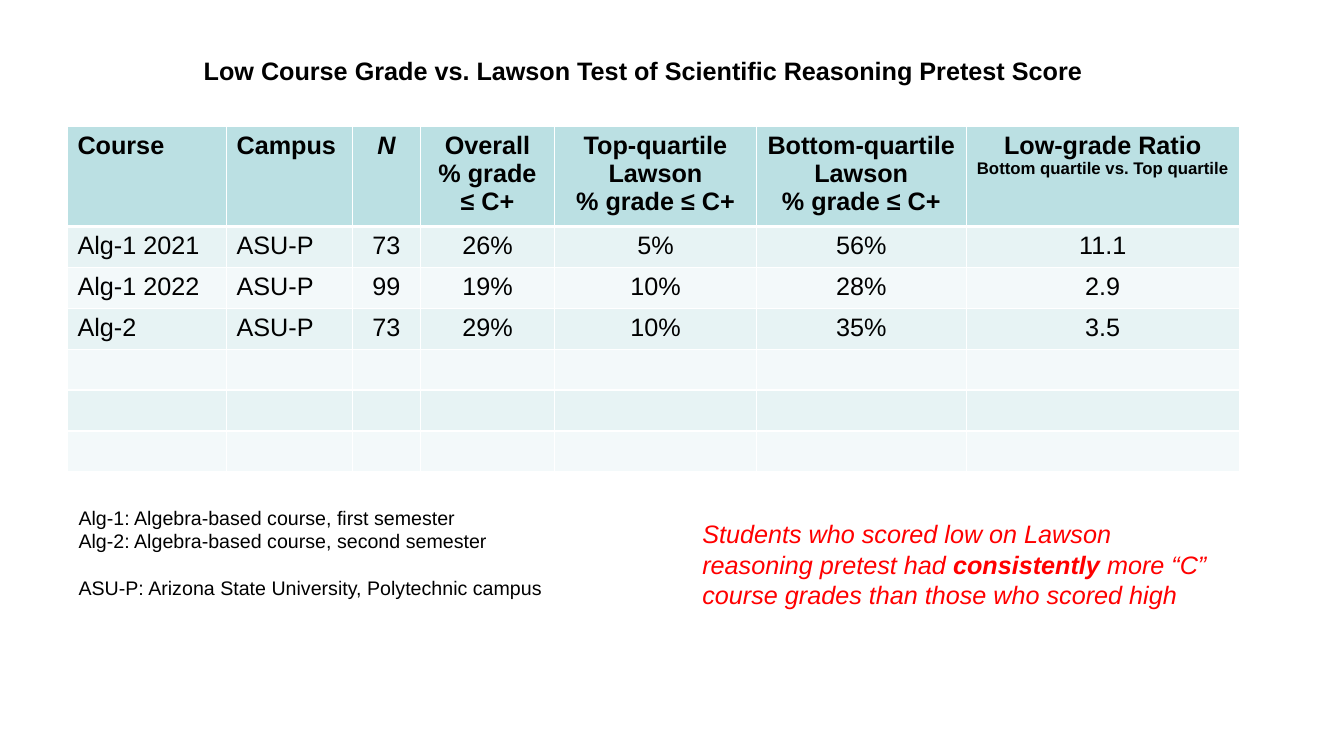
from pptx import Presentation
from pptx.dml.color import RGBColor
from pptx.enum.text import MSO_ANCHOR, PP_ALIGN
from pptx.oxml import parse_xml
from pptx.oxml.ns import nsdecls
from pptx.util import Cm, Pt

COLORS = {
    "header": "BBE0E3",
    "band": "E7F3F4",
    "light": "F3F9FA",
    "border": "FFFFFF",
    "text": "000000",
    "accent": "FF0000",
}


def style_run(r, size, color="text", bold=False, italic=False):
    r.font.name = "Arial"
    r.font.size = Pt(size)
    r.font.bold = bold
    r.font.italic = italic
    r.font.color.rgb = RGBColor.from_string(COLORS[color])


def add_border(cell, side, width):
    cell._tc.get_or_add_tcPr().append(parse_xml(
        f'<a:{side} {nsdecls("a")} w="{Pt(width)}"><a:solidFill>'
        f'<a:srgbClr val="{COLORS["border"]}"/></a:solidFill></a:{side}>'
    ))


prs = Presentation()
prs.slide_width = Cm(33.87)
prs.slide_height = Cm(19.05)
s = prs.slides.add_slide(prs.slide_layouts[5])

title = s.shapes.title
title.left, title.top, title.width, title.height = Cm(4.88), Cm(1.28), Cm(23.65), Cm(1)
tf = title.text_frame
tf.text = "Low Course Grade vs. Lawson Test of Scientific Reasoning Pretest Score"
tf.vertical_anchor = MSO_ANCHOR.MIDDLE
tf.paragraphs[0].alignment = PP_ALIGN.LEFT
style_run(tf.paragraphs[0].runs[0], 18, bold=True)

rows = [
    ["Course", "Campus", "N", "Overall\n% grade ≤ C+",
     "Top-quartile Lawson\n% grade ≤ C+", "Bottom-quartile Lawson\n% grade ≤ C+",
     "Low-grade Ratio\nBottom quartile vs. Top quartile"],
    ["Alg-1 2021", "ASU-P", "73", "26%", "5%", "56%", "11.1"],
    ["Alg-1 2022", "ASU-P", "99", "19%", "10%", "28%", "2.9"],
    ["Alg-2", "ASU-P", "73", "29%", "10%", "35%", "3.5"],
] + [[""] * 7] * 3
col_widths = [4.01, 3.18, 1.7, 3.39, 5.08, 5.29, 6.88]
row_heights = [2.53] + [1.03] * 6

table = s.shapes.add_table(
    len(rows), len(col_widths), Cm(1.7), Cm(3.18),
    Cm(sum(col_widths)), Cm(sum(row_heights)),
).table
table.horz_banding = False
for column, width in zip(table.columns, col_widths):
    column.width = Cm(width)
for row, height in zip(table.rows, row_heights):
    row.height = Cm(height)

for i, values in enumerate(rows):
    fill = "header" if i == 0 else "band" if i % 2 else "light"
    for j, value in enumerate(values):
        cell = table.cell(i, j)
        add_border(cell, "lnL", 1)
        add_border(cell, "lnR", 1)
        add_border(cell, "lnT", 3 if i == 1 else 1)
        add_border(cell, "lnB", 3 if i == 0 else 1)
        cell.fill.solid()
        cell.fill.fore_color.rgb = RGBColor.from_string(COLORS[fill])
        cell.text_frame.text = value
        for p in cell.text_frame.paragraphs:
            p.alignment = PP_ALIGN.CENTER if j > 1 else PP_ALIGN.LEFT
            for r in p.runs:
                size = 12 if r.text.startswith("Bottom quartile") else 18
                style_run(r, size, bold=i == 0, italic=r.text == "N")

notes = s.shapes.add_textbox(Cm(1.73), Cm(12.62), Cm(15.88), Cm(2.6))
tf = notes.text_frame
tf.word_wrap = True
tf.text = (
    "Alg-1: Algebra-based course, first semester\n"
    "Alg-2: Algebra-based course, second semester\n"
    "ASU-P: Arizona State University, Polytechnic campus"
)
for p in tf.paragraphs:
    p.line_spacing = Pt(16.7)
    style_run(p.runs[0], 14)
tf.paragraphs[-1].space_before = Pt(16.7)

finding = s.shapes.add_textbox(Cm(17.45), Cm(12.93), Cm(13.44), Cm(2.57))
tf = finding.text_frame
tf.word_wrap = True
p = tf.paragraphs[0]
p.line_spacing = Pt(21.8)
for text, bold in [
    ("Students who scored low on Lawson reasoning pretest had ", False),
    ("consistently", True),
    (" more “C” course grades than those who scored high", False),
]:
    r = p.add_run()
    r.text = text
    style_run(r, 18, "accent", bold, italic=True)

prs.save("out.pptx")
